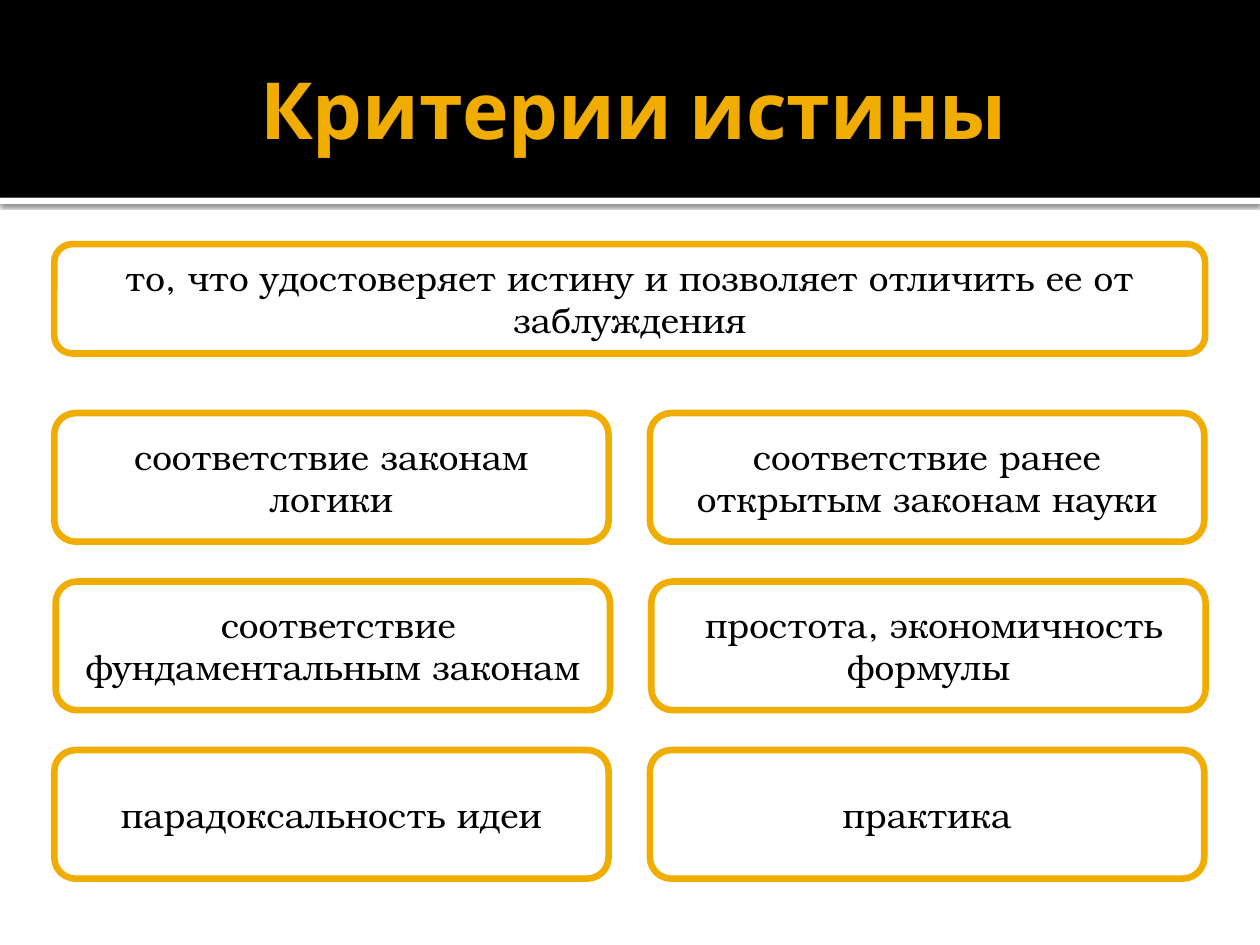
"""Builds the slide on the criteria of truth: a banner title, a definition and a grid of criteria."""
from dataclasses import dataclass

import pptx
import pptx.dml.color
import pptx.enum.shapes
import pptx.enum.text
import pptx.oxml
import pptx.oxml.ns
import pptx.util

Pt = pptx.util.Pt
RGB = pptx.dml.color.RGBColor.from_string
Kind = pptx.enum.shapes.MSO_SHAPE


@dataclass(frozen=True)
class Theme:
    accent: str = "F0AD00"
    dark: str = "000000"
    light: str = "FFFFFF"
    title_font: str = "Cabin"
    body_font: str = "TeX Gyre Bonum"
    title_size: float = 45
    body_size: float = 20
    outline: float = 3.78


class SlideBuilder:
    def __init__(self, page, theme):
        self.page = page
        self.theme = theme

    def shape(self, kind, frame, fill):
        shape = self.page.shapes.add_shape(kind, *map(Pt, frame))
        shape.shadow.inherit = False
        shape.fill.solid()
        shape.fill.fore_color.rgb = RGB(fill)
        shape.line.fill.background()
        return shape

    def band(self, frame, fill):
        return self.shape(Kind.RECTANGLE, frame, fill)

    def drop_shadow(self, shape):
        properties = shape._element.spPr
        effects = properties.find(pptx.oxml.ns.qn("a:effectLst"))
        effects.append(pptx.oxml.parse_xml(
            f'<a:outerShdw {pptx.oxml.ns.nsdecls("a")} blurRad="{Pt(2.5)}" '
            f'dist="{Pt(0.8)}" dir="5400000" algn="tl" rotWithShape="0">'
            f'<a:srgbClr val="{self.theme.dark}"><a:alpha val="60000"/></a:srgbClr>'
            '</a:outerShdw>'))

    def set_text(self, frame, text, font_name, size, color, bold=False):
        frame.word_wrap = True
        frame.vertical_anchor = pptx.enum.text.MSO_ANCHOR.MIDDLE
        frame.text = text
        para = frame.paragraphs[0]
        para.alignment = pptx.enum.text.PP_ALIGN.CENTER
        para.font.name = font_name
        para.font.size = Pt(size)
        para.font.bold = bold
        para.font.color.rgb = RGB(color)

    def title(self, frame, text):
        title = self.page.shapes.title
        title.left, title.top, title.width, title.height = map(Pt, frame)
        self.page.shapes._spTree.append(title._element)
        text_frame = title.text_frame
        text_frame.auto_size = pptx.enum.text.MSO_AUTO_SIZE.NONE
        text_frame.margin_left = Pt(7.2)
        text_frame.margin_top = text_frame.margin_right = text_frame.margin_bottom = Pt(3.6)
        self.set_text(text_frame, text, self.theme.title_font, self.theme.title_size,
                      self.theme.accent, bold=True)

    def card(self, frame, text):
        box = self.shape(Kind.ROUNDED_RECTANGLE, frame, self.theme.light)
        box.line.color.rgb = RGB(self.theme.accent)
        box.line.width = Pt(self.theme.outline)
        self.set_text(box.text_frame, text, self.theme.body_font, self.theme.body_size,
                      self.theme.dark)


CRITERIA = [
    (0, ["соответствие законам логики", "соответствие ранее открытым законам науки"]),
    (0.8, [" соответствие фундаментальным законам", " простота, экономичность формулы"]),
    (0, ["парадоксальность идеи", "практика"]),
]


def main():
    deck = pptx.Presentation()
    deck.slide_width, deck.slide_height = Pt(720), Pt(540)
    theme = Theme()
    builder = SlideBuilder(deck.slides.add_slide(deck.slide_layouts[5]), theme)

    builder.drop_shadow(builder.band((0, 113, 720, 3.6), theme.light))
    builder.band((0, 0, 720, 113), theme.dark)
    builder.title((36, 12.2, 648, 98.6), "Критерии истины")

    left, top = 31, 236
    builder.card((left, 139.5, 657.7, 62.5),
                 "то, что удостоверяет истину и позволяет отличить ее от заблуждения")
    for row, (shift, texts) in enumerate(CRITERIA):
        for column, text in enumerate(texts):
            builder.card((left + shift + column * 340.4, top + row * 96.3, 316.8, 73.5), text)

    deck.save("out.pptx")


if __name__ == "__main__":
    main()
